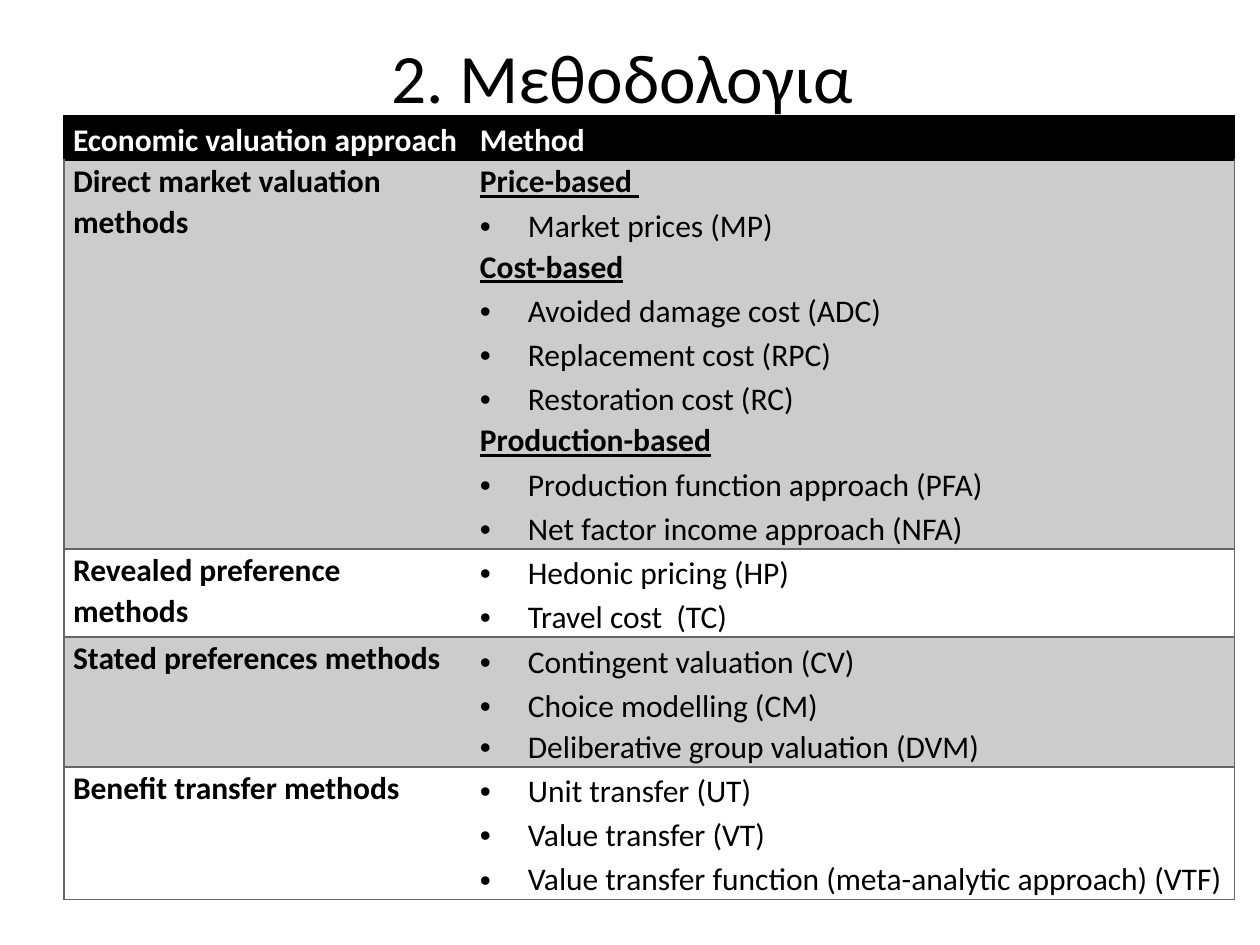
"""Builds a slide with a table of economic valuation methods."""
from lxml.etree import SubElement
from pptx import Presentation
from pptx.dml.color import RGBColor
from pptx.enum.text import MSO_ANCHOR, PP_ALIGN
from pptx.oxml.ns import qn
from pptx.util import Inches, Pt

COLORS = {"black": "000000", "white": "FFFFFF", "band": "CCCCCC", "rule": "666666"}
HEADS = ("Price-based ", "Cost-based", "Production-based")
ROWS = [
    (0.32, "Economic valuation approach", ["Method"]),
    (2.8, "Direct market valuation methods", [
        "Price-based ", "Market prices (MP)",
        "Cost-based", "Avoided damage cost (ADC)", "Replacement cost (RPC)",
        "Restoration cost (RC)",
        "Production-based", "Production function approach (PFA)",
        "Net factor income approach (NFA)"]),
    (0.64, "Revealed preference methods", ["Hedonic pricing (HP)", "Travel cost  (TC)"]),
    (0.93, "Stated preferences methods", [
        "Contingent valuation (CV)", "Choice modelling (CM)",
        "Deliberative group valuation (DVM)"]),
    (0.96, "Benefit transfer methods", [
        "Unit transfer (UT)", "Value transfer (VT)",
        "Value transfer function (meta-analytic approach) (VTF)"]),
]


def style(run, size, color, bold=False):
    run.font.name = "Calibri"
    run.font.size = Pt(size)
    run.font.bold = bold
    run.font.color.rgb = RGBColor.from_string(COLORS[color])


def border(cell, side, color):
    line = SubElement(cell._tc.get_or_add_tcPr(), qn(f"a:ln{side}"), w=str(Pt(1)))
    if color:
        fill = SubElement(line, qn("a:solidFill"))
        SubElement(fill, qn("a:srgbClr"), val=COLORS[color])
    else:
        SubElement(line, qn("a:noFill"))


deck = Presentation()
deck.slide_width, deck.slide_height = Inches(10), Inches(7.5)
slide = deck.slides.add_slide(deck.slide_layouts[5])

title = slide.shapes.title
title.left, title.top = Inches(0.5), Inches(0.3)
title.width, title.height = Inches(9), Inches(0.61)
frame = title.text_frame
frame.text = "2. Μεθοδολογια "
frame.vertical_anchor = MSO_ANCHOR.MIDDLE
frame.paragraphs[0].alignment = PP_ALIGN.CENTER
style(frame.paragraphs[0].runs[0], 39.6, "black")

table = slide.shapes.add_table(
    len(ROWS), 2, Inches(0.51), Inches(0.92), Inches(9.29), Inches(5.65)).table
table.first_row = True
table.horz_banding = False
table.columns[0].width, table.columns[1].width = Inches(3.23), Inches(6.06)

for row, (height, label, methods) in enumerate(ROWS):
    table.rows[row].height = Inches(height)
    edge = "black" if row == 0 else "rule"
    top = "black" if row < 2 else "rule"
    for col, lines in enumerate(([label], methods)):
        cell = table.cell(row, col)
        cell.margin_left = cell.margin_right = Inches(0.07)
        cell.margin_top = cell.margin_bottom = 0
        border(cell, "L", None if col else edge)
        border(cell, "R", edge if col else None)
        border(cell, "T", top)
        border(cell, "B", edge)
        if row == 0 or row % 2:
            cell.fill.solid()
            cell.fill.fore_color.rgb = RGBColor.from_string(
                COLORS["band" if row else "black"])
        else:
            cell.fill.background()
        cell.text_frame.text = "\n".join(lines)
        for para in cell.text_frame.paragraphs:
            text = para.text
            item = row > 0 and col == 1 and text not in HEADS
            run = para.runs[0]
            style(run, 18, "black" if row else "white", not item)
            run.font.underline = text in HEADS
            tight = text.startswith("Deliberative") or not item
            para.line_spacing = 1.07 if row and tight else 1.15
            if item:
                para.alignment = PP_ALIGN.JUSTIFY
                props = para._p.get_or_add_pPr()
                props.set("marL", str(Inches(0.38)))
                props.set("indent", str(-Inches(0.38)))
                SubElement(props, qn("a:buFont"), typeface="Arial")
                SubElement(props, qn("a:buChar"), char="•")

deck.save("out.pptx")
